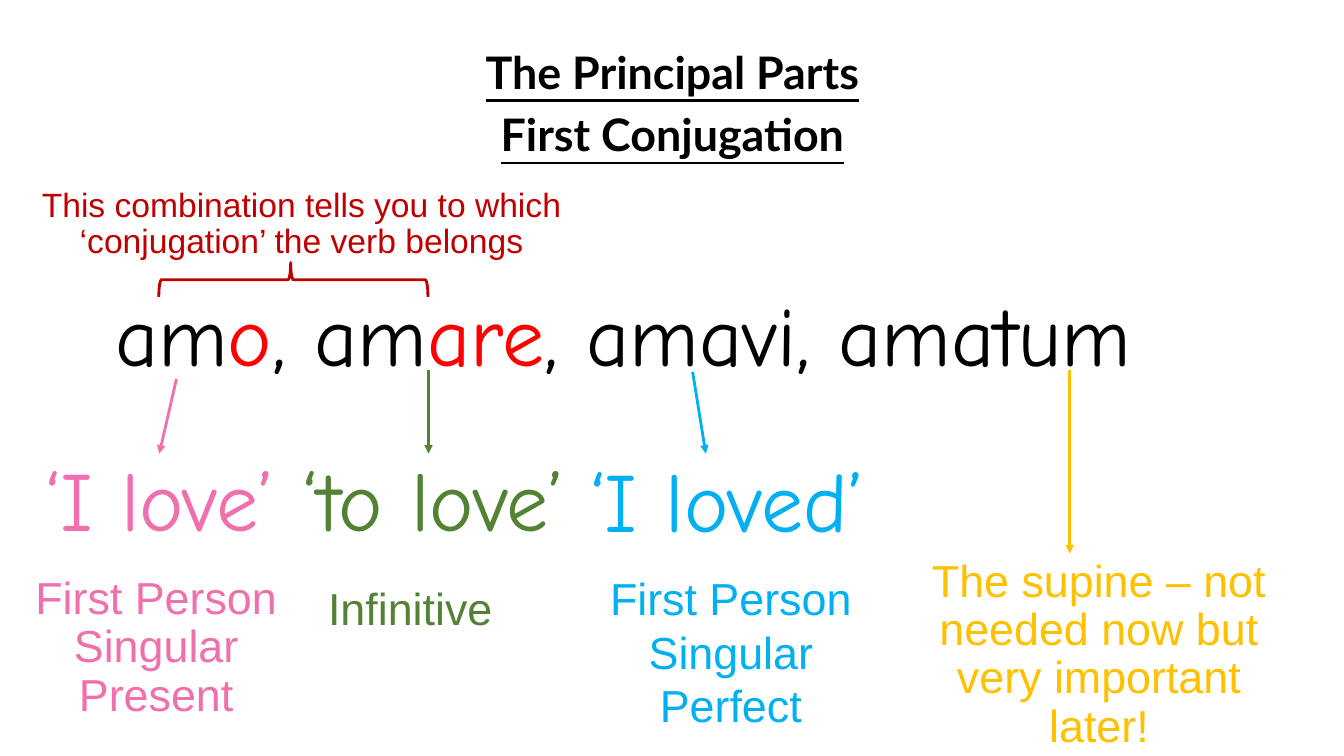
from dataclasses import dataclass

from lxml.etree import SubElement
from pptx import Presentation
from pptx.dml.color import RGBColor
from pptx.enum.shapes import MSO_CONNECTOR as Link, MSO_SHAPE as Shape
from pptx.enum.text import MSO_ANCHOR as Anchor, PP_ALIGN as Align
from pptx.oxml.ns import qn
from pptx.util import Emu, Pt

SCALE = 9144
BLACK, RED, CRIMSON = "000000", "FF0000", "C00000"
PINK, GREEN, BLUE, GOLD = "EF70AD", "548235", "00B0F0", "FFC000"
HAND, SANS, HEAD = "Comic Neue", "Arial", "Lato"

Box = tuple[int, int, int, int]
Run = tuple[str, str]


@dataclass
class Label:
    text: str
    box: Box
    color: str
    font: str = SANS
    size: int = 32
    ratio: float = 0.9
    anchor: Anchor = Anchor.BOTTOM


@dataclass
class Arrow:
    start: tuple[int, int]
    end: tuple[int, int]
    color: str


LABELS = [
    Label("‘I love’", (29, 439, 258, 111), PINK, HAND, 60),
    Label("‘to love’", (272, 439, 315, 111), GREEN, HAND, 60),
    Label("‘I loved’", (563, 440, 315, 111), BLUE, HAND, 60),
    Label("First Person Singular Present", (20, 549, 270, 171), PINK),
    Label("Infinitive", (278, 565, 258, 70), GREEN),
    Label("The supine – not needed now but very important later!",
          (914, 550, 352, 201), GOLD),
    Label("First Person Singular Perfect", (590, 561, 270, 172), BLUE,
          ratio=1.0, anchor=Anchor.TOP),
    Label("This combination tells you to which ‘conjugation’ the verb belongs",
          (29, 163, 540, 101), CRIMSON, size=24),
]

ARROWS = [
    Arrow((175, 376), (158, 450), PINK),
    Arrow((425, 367), (425, 450), GREEN),
    Arrow((1061, 367), (1061, 549), GOLD),
    Arrow((687, 369), (700, 450), BLUE),
]


def px(size: int) -> Emu:
    return Emu(size * SCALE)


def paint(code: str) -> RGBColor:
    return RGBColor.from_string(code)


def write(slide, lines: list[list[Run]], box: Box, *, font: str, size: int,
          ratio: float = 0.9, anchor: Anchor = Anchor.BOTTOM,
          before: int = 0, strong: bool = False) -> None:
    frame = slide.shapes.add_textbox(*map(px, box)).text_frame
    frame.word_wrap = True
    frame.vertical_anchor = anchor
    for index, runs in enumerate(lines):
        para = frame.add_paragraph() if index else frame.paragraphs[0]
        para.alignment = Align.CENTER
        para.line_spacing = ratio
        para.space_before = Pt(before)
        for text, color in runs:
            run = para.add_run()
            run.text = text
            run.font.name = font
            run.font.size = Pt(size)
            run.font.bold = run.font.underline = strong
            run.font.color.rgb = paint(color)


def point(slide, arrow: Arrow) -> None:
    link = slide.shapes.add_connector(
        Link.STRAIGHT, *map(px, arrow.start + arrow.end))
    link.line.color.rgb = paint(arrow.color)
    link.line.width = Pt(2)
    SubElement(link.line._get_or_add_ln(), qn("a:tailEnd"), type="triangle")
    SubElement(link._element.spPr, qn("a:effectLst"))


def embrace(slide, box: Box, color: str) -> None:
    brace = slide.shapes.add_shape(Shape.RIGHT_BRACE, *map(px, box))
    brace.rotation = 270
    brace.adjustments[0] = 0.08
    brace.adjustments[1] = 0.49
    brace.shadow.inherit = False
    brace.fill.background()
    brace.line.color.rgb = paint(color)
    brace.line.width = Pt(2)


def main() -> None:
    deck = Presentation()
    deck.slide_width, deck.slide_height = px(1333), px(750)
    slide = deck.slides.add_slide(deck.slide_layouts[6])

    verb = [("am", BLACK), ("o", RED), (", am", BLACK), ("are", RED),
            (", amavi, amatum", BLACK)]
    write(slide, [verb], (61, 276, 1114, 111), font=HAND, size=60)
    title = [[("The Principal Parts", BLACK)], [("First Conjugation", BLACK)]]
    write(slide, title, (167, 45, 1000, 142), font=HEAD, size=32,
          anchor=Anchor.TOP, before=10, strong=True)

    for arrow in ARROWS:
        point(slide, arrow)
    for label in LABELS:
        write(slide, [[(label.text, label.color)]], label.box,
              font=label.font, size=label.size, ratio=label.ratio,
              anchor=label.anchor)
    embrace(slide, (274, 144, 34, 267), CRIMSON)

    deck.save("out.pptx")


if __name__ == "__main__":
    main()
